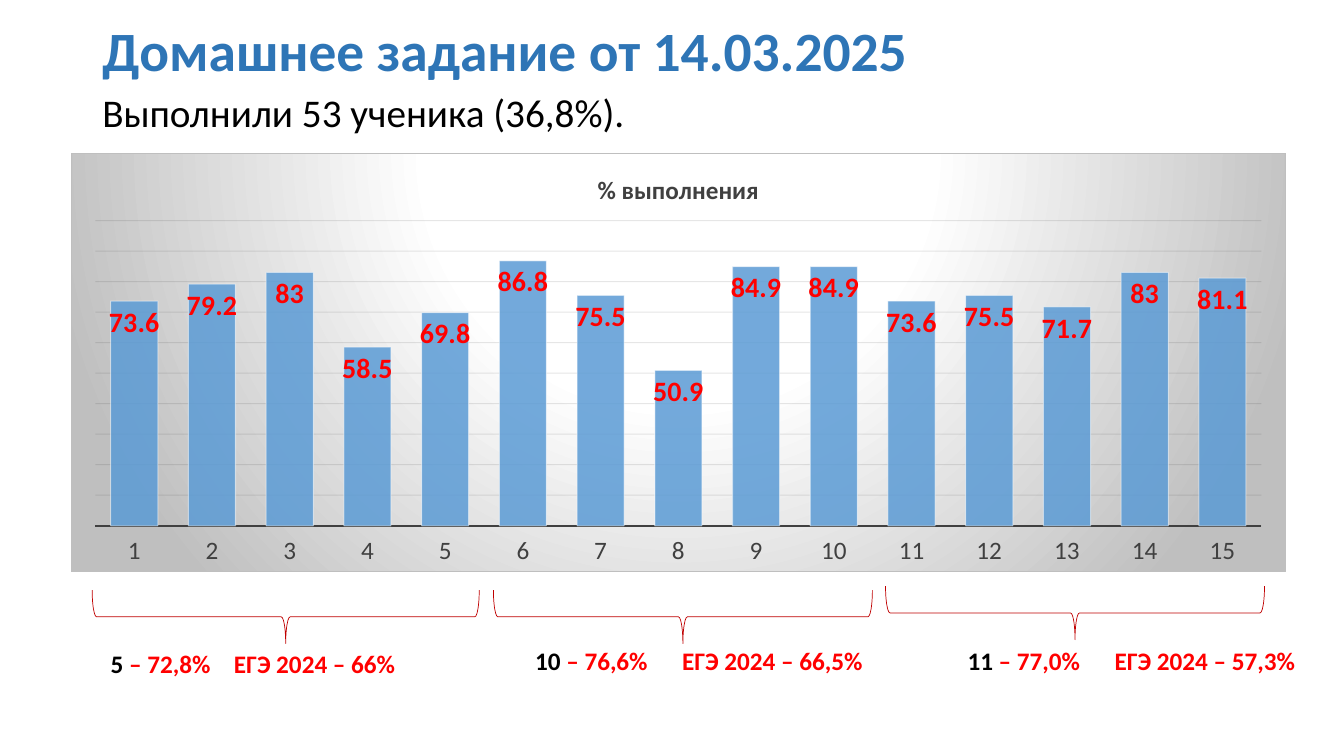
from lxml import etree
from pptx import Presentation
from pptx.chart.data import CategoryChartData
from pptx.dml.color import RGBColor
from pptx.enum.chart import XL_CHART_TYPE, XL_LABEL_POSITION, XL_TICK_LABEL_POSITION, XL_TICK_MARK
from pptx.enum.shapes import MSO_SHAPE
from pptx.enum.text import MSO_ANCHOR, MSO_AUTO_SIZE, PP_ALIGN
from pptx.oxml import parse_xml
from pptx.oxml.ns import nsdecls, qn
from pptx.util import Pt

COLUMN = XL_CHART_TYPE.COLUMN_CLUSTERED
INSIDE_END = XL_LABEL_POSITION.INSIDE_END
LABELS_LOW = XL_TICK_LABEL_POSITION.LOW
NO_TICKS = XL_TICK_MARK.NONE
BRACE = MSO_SHAPE.LEFT_BRACE
MIDDLE = MSO_ANCHOR.MIDDLE
NO_FIT, GROW = MSO_AUTO_SIZE.NONE, MSO_AUTO_SIZE.SHAPE_TO_FIT_TEXT
LEFT = PP_ALIGN.LEFT

FONT = "Calibri"
BLACK = RGBColor(0x00, 0x00, 0x00)
WHITE = RGBColor(0xFF, 0xFF, 0xFF)
RED = RGBColor(0xFF, 0x00, 0x00)
DARK_RED = RGBColor(0xC0, 0x00, 0x00)
TITLE_BLUE = RGBColor(0x2E, 0x75, 0xB6)
BAR_BLUE = RGBColor(0x5B, 0x9B, 0xD5)
DARK_GREY = RGBColor(0x40, 0x40, 0x40)
GRID_GREY = RGBColor(0x0D, 0x0D, 0x0D)

RESULTS = [73.6, 79.2, 83, 58.5, 69.8, 86.8, 75.5, 50.9,
           84.9, 84.9, 73.6, 75.5, 71.7, 83, 81.1]

# class, result, exam result, brace (centre x, centre y, length), label (x, y, width), tab
GROUPS = [
    ("5 ", "– 72,8%", "ЕГЭ 2024 – 66%", (204.1, 440.6, 276.5), (72, 459.4, 280), 88),
    ("10 ", "– 76,6%", "ЕГЭ 2024 – 66,5%", (487.8, 440.6, 270.7), (375.1, 457.2, 257.8), 105),
    ("11 ", "– 77,0%", "ЕГЭ 2024 – 57,3%", (767.9, 437.8, 270.7), (684, 457.2, 255.6), 105),
]
BRACE_DEPTH = 38.2

CHART_SURFACE = f"""
<c:spPr {nsdecls('c', 'a')}>
  <a:gradFill>
    <a:gsLst>
      <a:gs pos="0"><a:srgbClr val="FFFFFF"/></a:gs>
      <a:gs pos="39000"><a:srgbClr val="FFFFFF"/></a:gs>
      <a:gs pos="100000"><a:srgbClr val="BFBFBF"/></a:gs>
    </a:gsLst>
    <a:path path="circle">
      <a:fillToRect l="50000" t="-80000" r="50000" b="180000"/>
    </a:path>
  </a:gradFill>
  <a:ln w="9525"><a:solidFill><a:srgbClr val="BFBFBF"/></a:solidFill></a:ln>
</c:spPr>"""

PLOT_LAYOUT = f"""
<c:layout {nsdecls('c')}><c:manualLayout>
  <c:layoutTarget val="inner"/><c:xMode val="edge"/><c:yMode val="edge"/>
  <c:x val="0.02"/><c:y val="0.16"/><c:w val="0.96"/><c:h val="0.73"/>
</c:manualLayout></c:layout>"""


def style_font(font, size, color, bold=False):
    font.name = FONT
    font.size = Pt(size)
    font.bold = bold
    font.color.rgb = color


def add_run(p, text, size, color, bold=False):
    r = p.add_run()
    r.text = text
    style_font(r.font, size, color, bold)


def style_line(line, color, width, opacity=100):
    line.color.rgb = color
    line.width = Pt(width)
    set_opacity(line.fill, color, opacity)


def set_opacity(fill, color, opacity):
    fill.solid()
    fill.fore_color.rgb = color
    if opacity < 100:
        # The colour element is reached through the fill's own XML.
        srgb = fill._xPr.find(".//" + qn("a:srgbClr"))
        etree.SubElement(srgb, qn("a:alpha")).set("val", str(opacity * 1000))


def add_title(s, text):
    sp = s.shapes.title
    sp.left, sp.top, sp.width, sp.height = Pt(66), Pt(18), Pt(828), Pt(41)
    tf = sp.text_frame
    tf.auto_size = NO_FIT
    tf.vertical_anchor = MIDDLE
    p = tf.paragraphs[0]
    p.alignment = LEFT
    p.line_spacing = 0.9
    add_run(p, text, 39.6, TITLE_BLUE, True)


def add_text(s, x, y, width, height, wrap=True):
    """Add an empty text box and return its first paragraph."""
    tf = s.shapes.add_textbox(Pt(x), Pt(y), Pt(width), Pt(height)).text_frame
    tf.word_wrap = wrap
    tf.auto_size = GROW
    return tf.paragraphs[0]


def add_brace(s, center_x, center_y, length):
    """Add a brace that opens upwards, as a left brace turned on its side."""
    sp = s.shapes.add_shape(BRACE, Pt(center_x - BRACE_DEPTH / 2), Pt(center_y - length / 2),
                            Pt(BRACE_DEPTH), Pt(length))
    sp.rotation = 270
    sp.shadow.inherit = False
    sp.fill.background()
    style_line(sp.line, DARK_RED, 0.5)


def add_group_label(s, group, result, exam, box, tab):
    p = add_text(s, *box, 29)
    tabs = etree.SubElement(p._p.get_or_add_pPr(), qn("a:tabLst"))
    etree.SubElement(tabs, qn("a:tab"), pos=str(Pt(tab)), algn="l")
    add_run(p, group, 18, BLACK, True)
    add_run(p, f"{result}\t{exam}", 18, RED, True)


def style_axes(chart):
    values = chart.value_axis
    values.minimum_scale, values.maximum_scale, values.major_unit = 0, 100, 10
    values.has_major_gridlines = True
    style_line(values.major_gridlines.format.line, GRID_GREY, 0.75, 10)
    values.visible = False

    tasks = chart.category_axis
    tasks.major_tick_mark = tasks.minor_tick_mark = NO_TICKS
    tasks.tick_label_position = LABELS_LOW
    style_font(tasks.tick_labels.font, 18, DARK_GREY)
    style_line(tasks.format.line, DARK_GREY, 1.5)


def style_bars(plot):
    plot.gap_width = 65
    plot.vary_by_categories = False
    bars = plot.series[0]
    set_opacity(bars.format.fill, BAR_BLUE, 85)
    style_line(bars.format.line, WHITE, 0.75, 50)
    labels = bars.data_labels
    labels.show_value = True
    labels.position = INSIDE_END
    style_font(labels.font, 20, RED, True)


def add_results_chart(s):
    data = CategoryChartData()
    data.categories = [str(n) for n in range(1, len(RESULTS) + 1)]
    data.add_series("% выполнения", RESULTS)
    chart = s.shapes.add_chart(COLUMN, Pt(50.4), Pt(109.4), Pt(868.3), Pt(299.5), data).chart
    style_font(chart.font, 10, BLACK)
    chart.has_legend = False
    chart.has_title = True
    title = chart.chart_title
    add_run(title.text_frame.paragraphs[0], "% выполнения", 18, DARK_GREY, True)
    title.include_in_layout = False
    style_axes(chart)
    style_bars(chart.plots[0])

    root = chart.element.find(qn("c:chart"))
    root.addnext(parse_xml(CHART_SURFACE))
    area = root.find(qn("c:plotArea"))
    for layout in area.findall(qn("c:layout")):
        area.remove(layout)
    area.insert(0, parse_xml(PLOT_LAYOUT))


def main():
    prs = Presentation()
    prs.slide_width, prs.slide_height = Pt(960), Pt(540)
    s = prs.slides.add_slide(prs.slide_layouts[5])
    add_title(s, "Домашнее задание от 14.03.2025")
    p = add_text(s, 66, 59.8, 391.7, 41, wrap=False)
    add_run(p, "Выполнили 53 ученика (36,8%).", 28, BLACK)
    add_results_chart(s)
    for group, result, exam, brace, box, tab in GROUPS:
        add_brace(s, *brace)
        add_group_label(s, group, result, exam, box, tab)
    prs.save("out.pptx")


if __name__ == "__main__":
    main()
